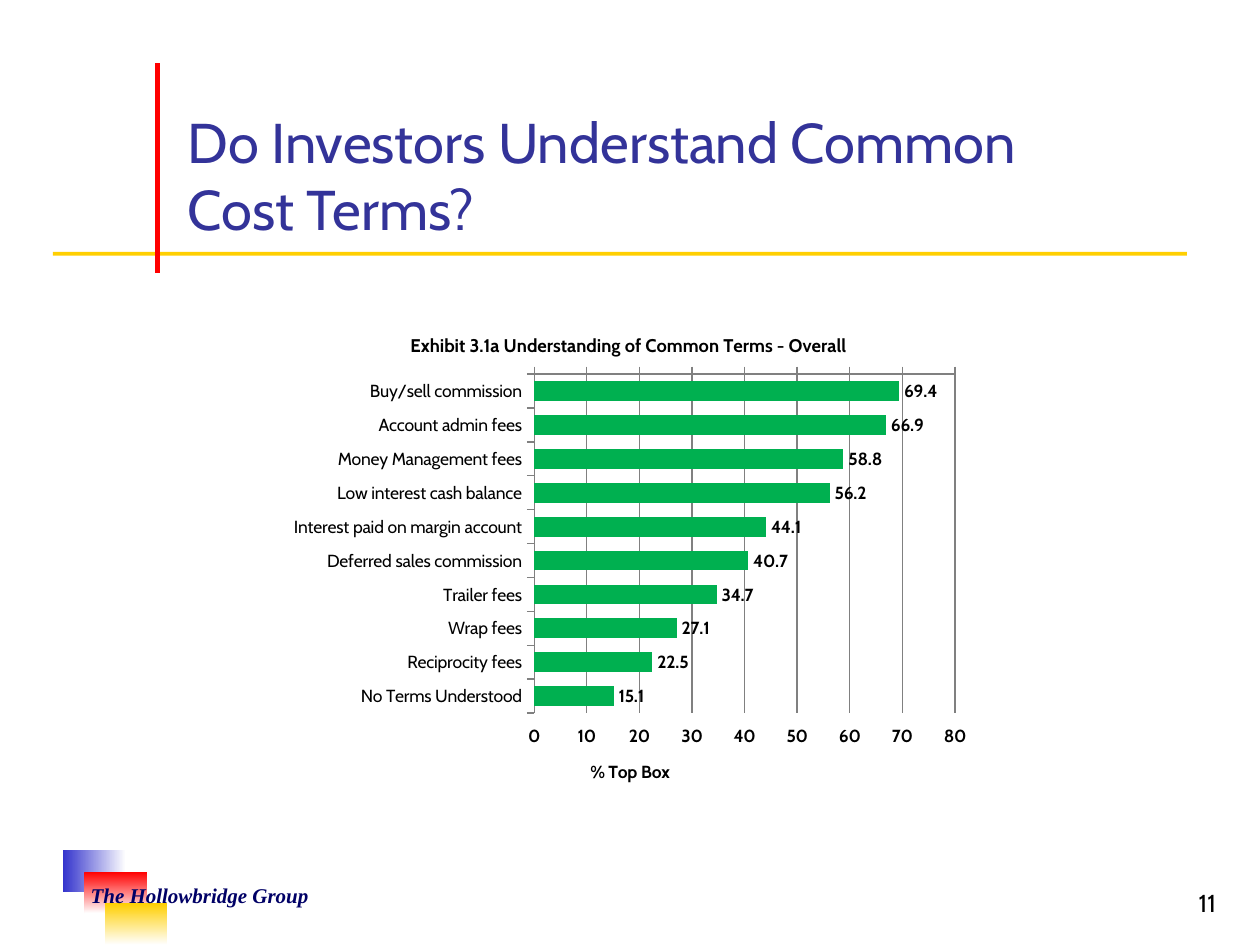
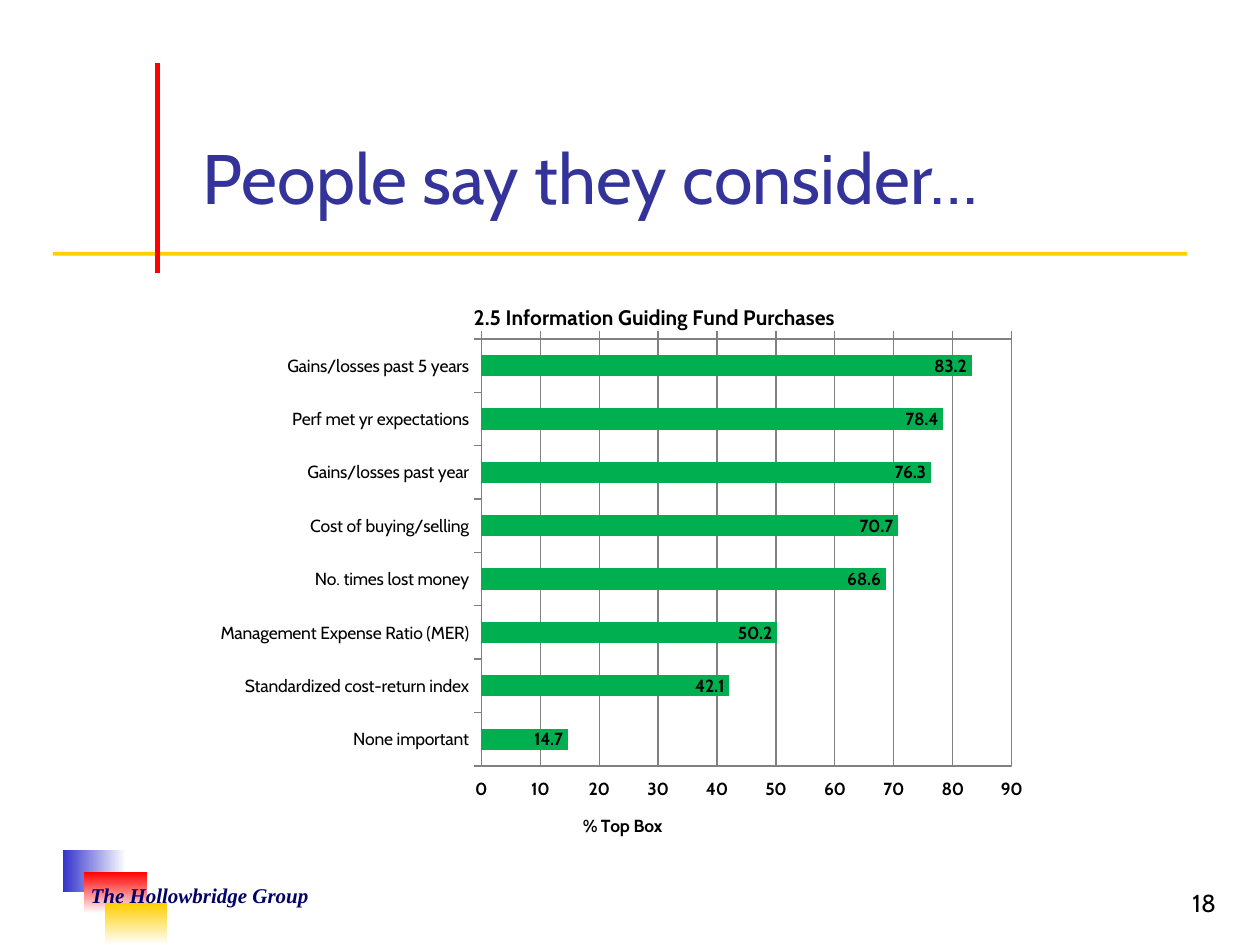
import pptx
import pptx.util
import pptx.chart.data
import pptx.dml.color
import pptx.enum.chart
import pptx.enum.shapes
import pptx.enum.text
import pptx.oxml
import pptx.oxml.ns

Inches, Pt = pptx.util.Inches, pptx.util.Pt
RGBColor = pptx.dml.color.RGBColor
qn = pptx.oxml.ns.qn
Align, Anchor = pptx.enum.text.PP_ALIGN, pptx.enum.text.MSO_ANCHOR
Label = pptx.enum.chart.XL_LABEL_POSITION
RECTANGLE = pptx.enum.shapes.MSO_SHAPE.RECTANGLE

# Shared look
BLUE = RGBColor(0x33, 0x33, 0xCC)
RED = RGBColor(0xFF, 0x00, 0x00)
YELLOW = RGBColor(0xFF, 0xCF, 0x01)
WHITE = RGBColor(0xFF, 0xFF, 0xFF)
BLACK = RGBColor(0x00, 0x00, 0x00)
NAVY = RGBColor(0x00, 0x00, 0x66)
TITLE_BLUE = RGBColor(0x33, 0x33, 0x99)
GREEN = RGBColor(0x00, 0xB0, 0x50)
GREY = RGBColor(0x80, 0x80, 0x80)
FONT = "Cabin"
GROUP_NAME = "The Hollowbridge Group"

# left, top, colour, gradient angle
FOOTER_SQUARES = [
    (0.5, 6.75, BLUE, 0),
    (0.67, 6.92, RED, 270),
    (0.83, 7.17, YELLOW, 270),
]

# All positions are inches on the slide
SLIDES = [
    {
        "title": "Do Investors Understand Common Cost Terms?",
        "title_at": (1.39, 0.88, 7.66, 1.01), "title_size": 32,
        "number": "11",
        "chart_at": (2.22, 2.49, 5.56, 3.93),
        "plot_at": (4.24, 2.97, 3.34, 2.69),
        "heading": "Exhibit 3.1a Understanding of Common Terms - Overall",
        "heading_at": (3.23, 2.61), "heading_size": 10.5,
        "axis_title_at": (4.66, 6),
        "maximum": 80, "gap": 71, "labels": Label.OUTSIDE_END, "framed": False,
        "data": {
            "Buy/sell commission": 69.4,
            "Account admin fees": 66.9,
            "Money Management fees": 58.8,
            "Low interest cash balance": 56.2,
            "Interest paid on margin account": 44.1,
            "Deferred sales commission": 40.7,
            "Trailer fees": 34.7,
            "Wrap fees": 27.1,
            "Reciprocity fees": 22.5,
            "No Terms Understood": 15.1,
        },
    },
    {
        "title": "People say they consider…",
        "title_at": (1.51, 0.88, 7.99, 1.04), "title_size": 40,
        "number": "18",
        "chart_at": (1.42, 2.28, 6.87, 4.47),
        "plot_at": (3.82, 2.69, 4.21, 3.39),
        "heading": "2.5 Information Guiding Fund Purchases",
        "heading_at": (3.73, 2.38), "heading_size": 12,
        "axis_title_at": (4.6, 6.43),
        "maximum": 90, "gap": 150, "labels": Label.INSIDE_END, "framed": True,
        "data": {
            "Gains/losses past 5 years": 83.2,
            "Perf met yr expectations": 78.4,
            "Gains/losses past year": 76.3,
            "Cost of buying/selling": 70.7,
            "No. times lost money": 68.6,
            "Management Expense Ratio (MER)": 50.2,
            "Standardized cost-return index": 42.1,
            "None important": 14.7,
        },
    },
]


def write(frame, text, size, color, font=FONT, bold=False, italic=False, align=None):
    """Add one formatted run to the first paragraph of a text frame."""
    para = frame.paragraphs[0]
    if align is not None:
        para.alignment = align
    span = para.add_run()
    span.text = text
    span.font.name, span.font.size = font, Pt(size)
    span.font.bold, span.font.italic = bold, italic
    span.font.color.rgb = color


def place(element, chart_at, left, top, *size):
    """Fix a chart part at a slide position by a manual layout."""
    for old in element.findall(qn("c:layout")):
        element.remove(old)
    shares = {"x": (left - chart_at[0]) / chart_at[2],
              "y": (top - chart_at[1]) / chart_at[3]}
    target = ""
    if size:
        target = '<c:layoutTarget val="inner"/>'
        shares["w"] = size[0] / chart_at[2]
        shares["h"] = size[1] / chart_at[3]
    modes = '<c:xMode val="edge"/><c:yMode val="edge"/>'
    values = "".join(f'<c:{key} val="{share:.4f}"/>' for key, share in shares.items())
    layout = pptx.oxml.parse_xml(
        f'<c:layout {pptx.oxml.ns.nsdecls("c")}><c:manualLayout>'
        f"{target}{modes}{values}</c:manualLayout></c:layout>")
    text = element.find(qn("c:tx"))
    if text is None:
        element.insert(0, layout)
    else:
        text.addnext(layout)


deck = pptx.Presentation()
deck.slide_width, deck.slide_height = Inches(10), Inches(7.5)

for page in SLIDES:
    slide = deck.slides.add_slide(deck.slide_layouts[5])
    shapes = slide.shapes

    # Footer squares and group name
    for left, top, color, angle in FOOTER_SQUARES:
        square = shapes.add_shape(RECTANGLE, Inches(left), Inches(top), Inches(0.5), Inches(0.33))
        square.shadow.inherit = False
        square.line.fill.background()
        square.fill.gradient()
        square.fill.gradient_angle = angle
        for stop, stop_color in zip(square.fill.gradient_stops, (color, WHITE)):
            stop.color.rgb = stop_color
    for at, text, style in [
        ((0, 6.75, 3.17, 0.5), GROUP_NAME,
         dict(size=12, color=NAVY, font="Times New Roman", bold=True, italic=True,
              align=Align.CENTER)),
        ((7.67, 6.83, 2.08, 0.5), page["number"],
         dict(size=14, color=BLACK, align=Align.RIGHT)),
    ]:
        box = shapes.add_textbox(*map(Inches, at))
        box.text_frame.word_wrap = True
        box.text_frame.vertical_anchor = Anchor.BOTTOM
        write(box.text_frame, text, **style)

    # Crossing title rules
    band = shapes.add_shape(RECTANGLE, Inches(0.42), Inches(2), Inches(9), Inches(0.03))
    band.shadow.inherit = False
    band.fill.solid()
    band.fill.fore_color.rgb = YELLOW
    band.line.fill.background()
    rule = shapes.add_connector(pptx.enum.shapes.MSO_CONNECTOR.STRAIGHT,
                                Inches(1.25), Inches(0.5), Inches(1.25), Inches(2.17))
    rule.line.color.rgb = RED
    rule.line.width = Pt(3)
    rule._element.spPr.append(pptx.oxml.parse_xml(f'<a:effectLst {pptx.oxml.ns.nsdecls("a")}/>'))

    # Title
    title = shapes.title
    title.left, title.top, title.width, title.height = map(Inches, page["title_at"])
    title.text_frame.word_wrap = True
    title.text_frame.auto_size = pptx.enum.text.MSO_AUTO_SIZE.NONE
    title.text_frame.vertical_anchor = Anchor.MIDDLE
    write(title.text_frame, page["title"], page["title_size"], TITLE_BLUE, align=Align.LEFT)

    # Bar chart
    data = pptx.chart.data.CategoryChartData()
    data.categories = list(page["data"])
    data.add_series("Series 1", list(page["data"].values()))
    chart_at = page["chart_at"]
    chart = shapes.add_chart(pptx.enum.chart.XL_CHART_TYPE.BAR_CLUSTERED,
                             *map(Inches, chart_at), data).chart
    chart.has_legend = False
    chart.font.name, chart.font.size = FONT, Pt(10)
    chart.font.color.rgb = BLACK
    chart.has_title = True
    write(chart.chart_title.text_frame, page["heading"], page["heading_size"], BLACK, bold=True)
    chart.chart_title.include_in_layout = False
    place(chart.chart_title._element, chart_at, *page["heading_at"])

    plot = chart.plots[0]
    plot.gap_width = page["gap"]
    plot.vary_by_categories = False
    bars = plot.series[0].format.fill
    bars.solid()
    bars.fore_color.rgb = GREEN
    plot.has_data_labels = True
    labels = plot.data_labels
    labels.show_value = True
    labels.position = page["labels"]
    labels.font.name, labels.font.size, labels.font.bold = FONT, Pt(10), True
    labels.font.color.rgb = BLACK

    # Axes: first category on top, values along the bottom
    categories, values = chart.category_axis, chart.value_axis
    categories.reverse_order = True
    categories.crosses_at = len(page["data"]) + 1
    values.tick_label_position = pptx.enum.chart.XL_TICK_LABEL_POSITION.HIGH
    values.minimum_scale, values.maximum_scale, values.major_unit = 0, page["maximum"], 10
    values.has_major_gridlines = True
    values.tick_labels.font.bold = True
    for axis in (categories, values):
        axis.major_tick_mark = pptx.enum.chart.XL_TICK_MARK.OUTSIDE
    for line in (categories.format.line, values.format.line, values.major_gridlines.format.line):
        line.color.rgb = GREY
        line.width = Pt(0.75)
    values.has_title = True
    write(values.axis_title.text_frame, "% Top Box", 10, BLACK, bold=True)
    place(values.axis_title._element, chart_at, *page["axis_title_at"])

    # Plot area
    area = plot._element.getparent()
    place(area, chart_at, *page["plot_at"])
    if page["framed"]:
        area.append(pptx.oxml.parse_xml(
            f'<c:spPr {pptx.oxml.ns.nsdecls("c", "a")}><a:noFill/><a:ln w="9525">'
            f'<a:solidFill><a:srgbClr val="{GREY}"/></a:solidFill></a:ln></c:spPr>'))

deck.save("out.pptx")
